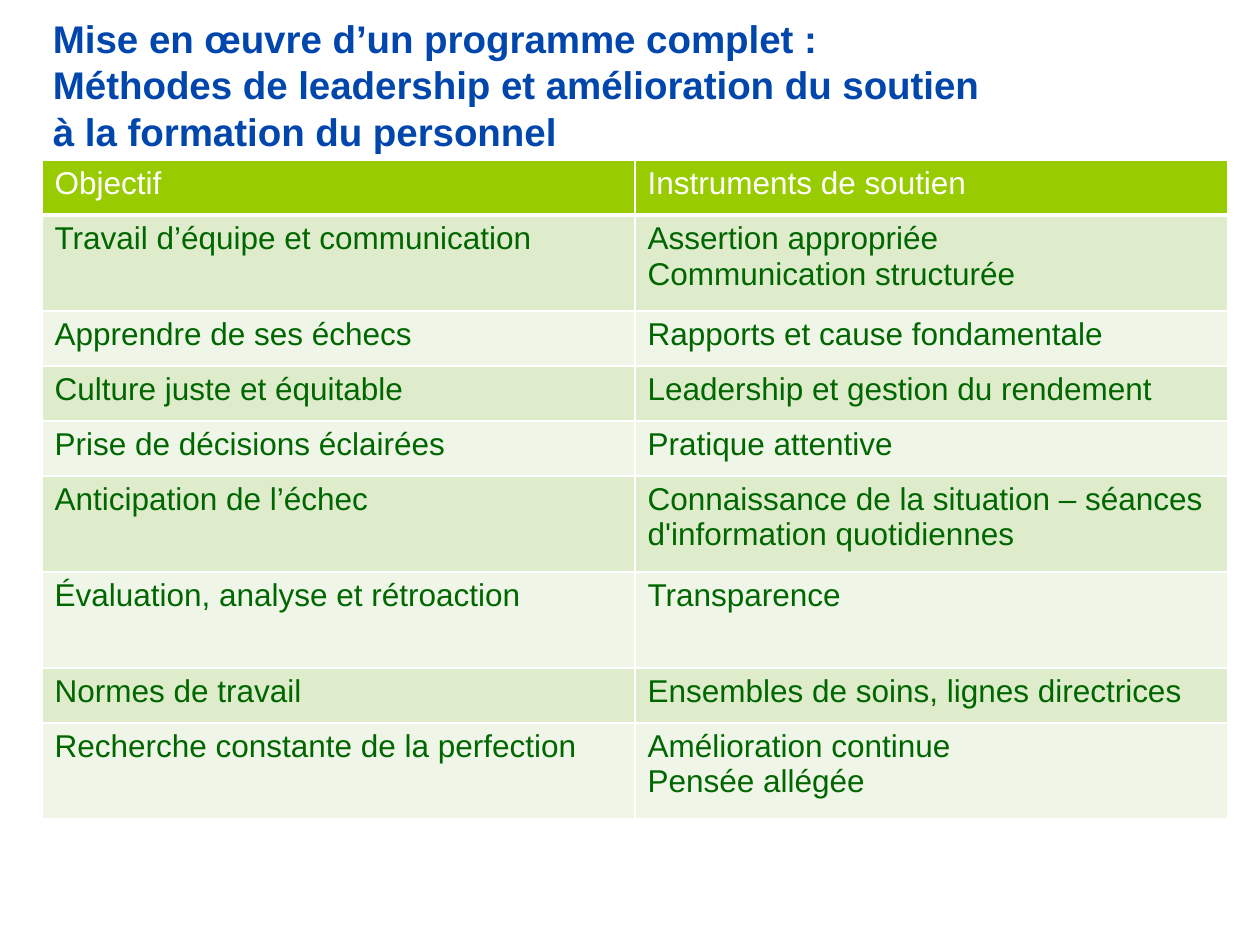
from lxml import etree
from pptx import Presentation
from pptx.dml.color import RGBColor
from pptx.enum.text import MSO_ANCHOR, PP_ALIGN
from pptx.oxml.ns import qn
from pptx.util import Pt

LEFT, MIDDLE = PP_ALIGN.LEFT, MSO_ANCHOR.MIDDLE
PX = 914400 / 126
COLORS = {
    "title": "0046AD",
    "header": "99CC00",
    "text": "006600",
    "dark_band": "DEECCC",
    "light_band": "EFF6E7",
    "white": "FFFFFF",
}


def px(count):
    return round(count * PX)


def write(frame, text, size=18, color="text", bold=False):
    frame.text = text
    for paragraph in frame.paragraphs:
        paragraph.alignment = LEFT
        for run in paragraph.runs:
            run.font.name = "Arial"
            run.font.size = Pt(size)
            run.font.bold = bold
            run.font.color.rgb = RGBColor.from_string(COLORS[color])


prs = Presentation()
prs.slide_width, prs.slide_height = px(1260), px(945)
slide = prs.slides.add_slide(prs.slide_layouts[5])

# Title
title = slide.shapes.title
title.left, title.top, title.width, title.height = px(53), px(32), px(1155), px(105)
heading = title.text_frame
heading.margin_left = heading.margin_right = heading.margin_top = heading.margin_bottom = 0
heading.vertical_anchor = MIDDLE
heading.word_wrap = True
write(
    heading,
    "Mise en œuvre d’un programme complet :\v"
    "Méthodes de leadership et amélioration du soutien\v"
    "à la formation du personnel",
    size=22, color="title", bold=True,
)

# Goals and the tools that support them
SINGLE, DOUBLE = 55, 96
rows = [
    (SINGLE, "Objectif", "Instruments de soutien"),
    (DOUBLE, "Travail d’équipe et communication", "Assertion appropriée\nCommunication structurée"),
    (SINGLE, "Apprendre de ses échecs", "Rapports et cause fondamentale"),
    (SINGLE, "Culture juste et équitable", "Leadership et gestion du rendement"),
    (SINGLE, "Prise de décisions éclairées", "Pratique attentive"),
    (DOUBLE, "Anticipation de l’échec",
     "Connaissance de la situation – séances d'information quotidiennes"),
    (DOUBLE, "Évaluation, analyse et rétroaction", "Transparence"),
    (SINGLE, "Normes de travail", "Ensembles de soins, lignes directrices"),
    (DOUBLE, "Recherche constante de la perfection", "Amélioration continue\nPensée allégée"),
]
total_height = sum(height for height, *_ in rows)
goals = slide.shapes.add_table(
    len(rows), 2, px(42), px(160), px(1186), px(total_height)
).table
for column in goals.columns:
    column.width = px(593)

for r, (height, *texts) in enumerate(rows):
    goals.rows[r].height = px(height)
    if r == 0:
        band, ink = "header", "white"
    else:
        band, ink = ("dark_band" if r % 2 else "light_band"), "text"
    for c, text in enumerate(texts):
        cell = goals.cell(r, c)
        write(cell.text_frame, text, color=ink)
        cell.fill.solid()
        cell.fill.fore_color.rgb = RGBColor.from_string(COLORS[band])

        # White borders, which the schema places before the fill
        properties = cell._tc.get_or_add_tcPr()
        for position, side in enumerate(("lnL", "lnR", "lnT", "lnB")):
            width = 3 if r == 0 and side == "lnB" else 1
            border = etree.Element(qn(f"a:{side}"), w=str(Pt(width)))
            solid = etree.SubElement(border, qn("a:solidFill"))
            etree.SubElement(solid, qn("a:srgbClr"), val=COLORS["white"])
            properties.insert(position, border)

prs.save("out.pptx")
